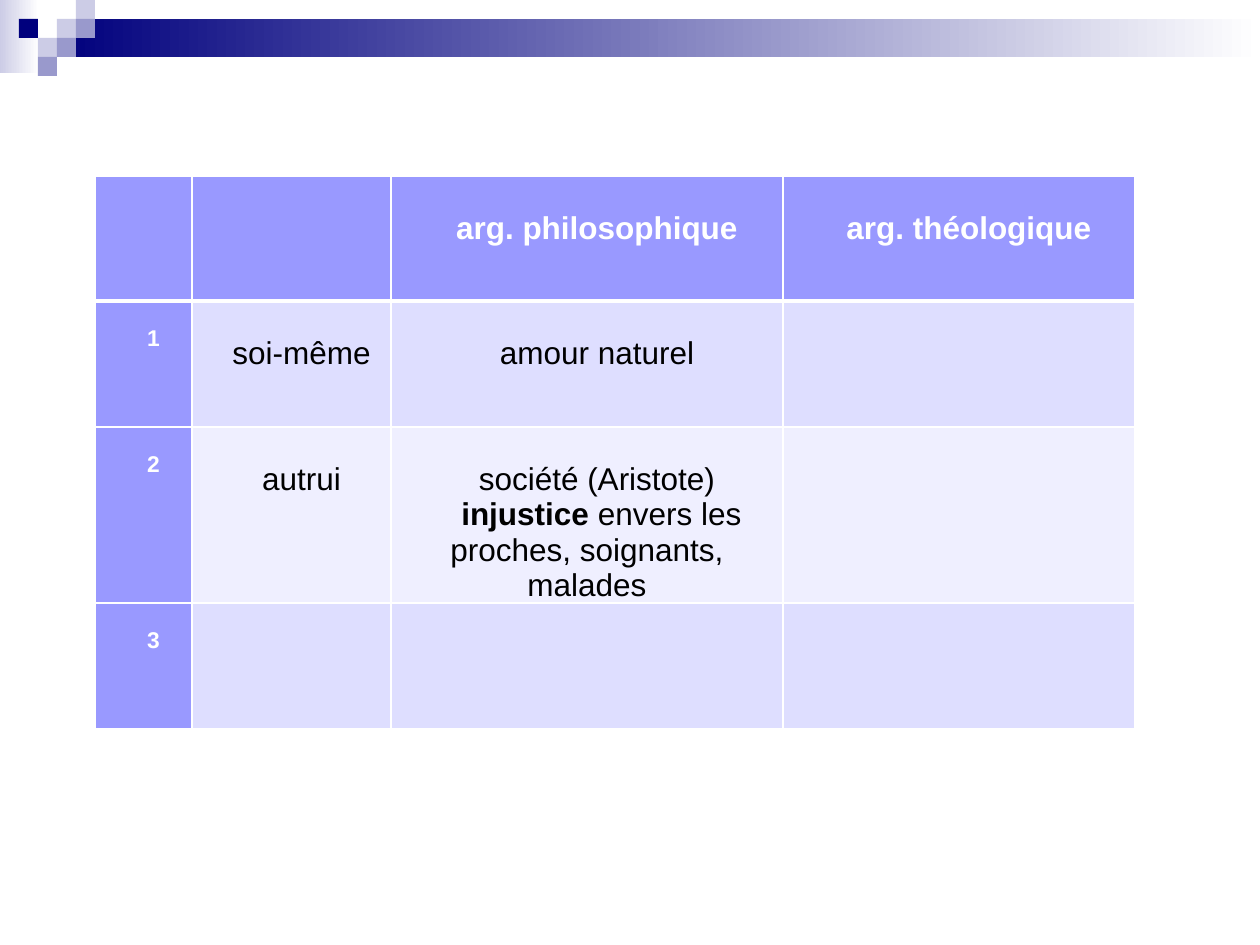
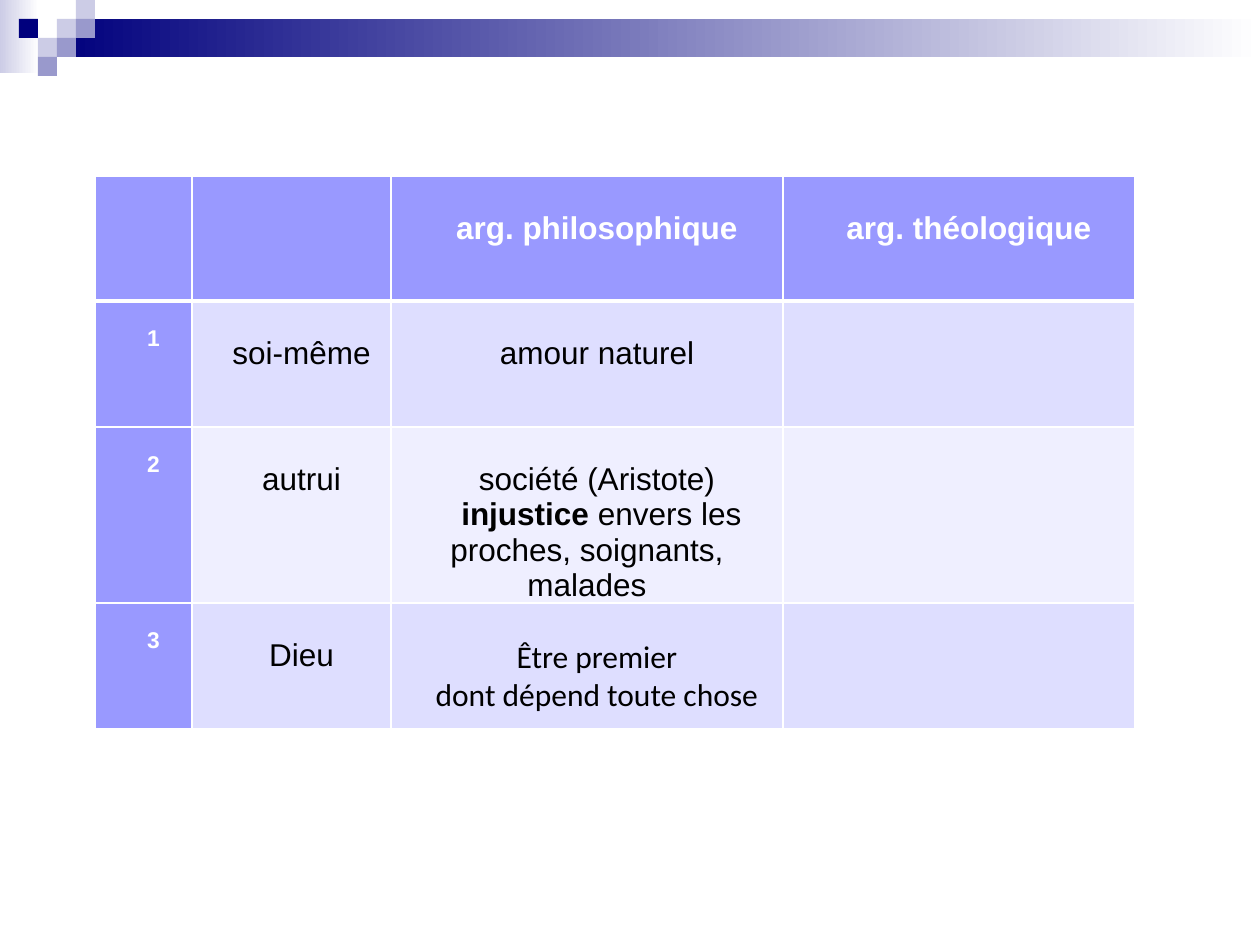
from dataclasses import dataclass
from itertools import count

from lxml.etree import SubElement
from pptx import Presentation
from pptx.dml.color import RGBColor
from pptx.enum.shapes import MSO_SHAPE
from pptx.enum.text import PP_ALIGN
from pptx.oxml.ns import qn
from pptx.util import Emu, Pt

PX = 914400 / 126
SLIDE_SIZE = (1260, 945)
TILE = 19
COLORS = {
    "navy": "00007D",
    "mist": "CCCCE6",
    "lavender": "9999CC",
    "header": "9999FF",
    "odd_row": "DEDEFF",
    "even_row": "EFEFFF",
    "white": "FFFFFF",
    "black": "000000",
}

TABLE_BOX = (95, 176, 1040, 553)
COLUMN_WIDTHS = (97, 199, 392, 352)
ROW_HEIGHTS = (125, 126, 176, 126)
SIDE_MARGIN = 9
FIRST_LINE_INDENT = 20


@dataclass(frozen=True)
class Run:
    """A stretch of text in one font."""
    text: str
    bold: bool = False
    font: str = "Arial"


def line(text, bold=False, font="Arial"):
    """Return a paragraph made of a single run."""
    return [Run(text, bold, font)]


HEADINGS = [[], [], [line("arg. philosophique", True)], [line("arg. théologique", True)]]
ONESELF = [[line("1", True)], [line("soi-même")], [line("amour naturel")], []]
OTHERS = [
    [line("2", True)],
    [line("autrui")],
    [
        line("société (Aristote)"),
        [Run(" "), Run("injustice", True), Run(" envers les proches, soignants, malades")],
    ],
    [],
]
GOD_OPEN = [[line("3", True)], [], [], []]
GOD_ANSWERED = [
    [line("3", True)],
    [line("Dieu")],
    [line("Être premier", font="Calibri"), line("dont dépend toute chose", font="Calibri")],
    [],
]


def px(length):
    """Turn a length in px into EMU."""
    return Emu(round(length * PX))


def rgb(name):
    """Look up a palette colour."""
    return RGBColor.from_string(COLORS[name])


def add_block(group, box, start, end=None):
    """Add a rectangle, plain or fading from left to right."""
    block = group.shapes.add_shape(MSO_SHAPE.RECTANGLE, *map(px, box))
    block.shadow.inherit = False
    block.line.fill.background()
    if end is None:
        block.fill.solid()
        block.fill.fore_color.rgb = rgb(start)
        return
    block.fill.gradient()
    block.fill.gradient_angle = 0
    for stop, name, position in zip(block.fill.gradient_stops, (start, end), (0, 1)):
        stop.color.rgb = rgb(name)
        stop.position = position


def decorate_master(master, slide):
    """Draw the top band and its tiles, and move them to the master."""
    band = slide.shapes.add_group_shape()
    add_block(band, (0, 0, 39, 73), "mist", "white")
    add_block(band, (3 * TILE, TILE, SLIDE_SIZE[0] - 3 * TILE, 2 * TILE), "navy", "white")
    tiles = [
        (3, 1, "mist"), (4, 0, "mist"), (4, 1, "lavender"), (2, 2, "mist"),
        (1, 1, "navy"), (3, 2, "lavender"), (2, 3, "lavender"),
    ]
    for column, row, color in tiles:
        add_block(band, (column * TILE, row * TILE, TILE, TILE), color)
    fresh_ids = count(100)
    for properties in band.element.iter(qn("p:cNvPr")):
        properties.set("id", str(next(fresh_ids)))
    master.shapes.element.insert(2, band.element)


def set_borders(cell, widths):
    """Give a cell white borders: left, right, top, bottom, in points."""
    properties = cell._tc.get_or_add_tcPr()
    for side, width in zip("LRTB", widths):
        border = SubElement(properties, qn(f"a:ln{side}"), w=str(Pt(width)))
        solid = SubElement(border, qn("a:solidFill"))
        SubElement(solid, qn("a:srgbClr"), val=COLORS["white"])


def write_cell(cell, paragraphs, size, color):
    """Write centred paragraphs one line below the top of a cell."""
    cell.margin_left = cell.margin_right = px(SIDE_MARGIN)
    cell.margin_top = px(35 if size == 18 else 25)
    cell.margin_bottom = 0
    frame = cell.text_frame
    for index, runs in enumerate(paragraphs):
        paragraph = frame.add_paragraph() if index else frame.paragraphs[0]
        paragraph.alignment = PP_ALIGN.CENTER
        paragraph._p.get_or_add_pPr().set("indent", str(px(FIRST_LINE_INDENT)))
        for part in runs:
            run = paragraph.add_run()
            run.text = part.text
            run.font.name = part.font
            run.font.size = Pt(size)
            run.font.bold = part.bold
            run.font.color.rgb = rgb(color)


def add_argument_table(slide, box, rows):
    """Add the table of arguments, with heading row and number column."""
    table = slide.shapes.add_table(len(rows), len(COLUMN_WIDTHS), *map(px, box)).table
    table.first_row = table.horz_banding = False
    for column, width in zip(table.columns, COLUMN_WIDTHS):
        column.width = px(width)
    for row, height in zip(table.rows, ROW_HEIGHTS):
        row.height = px(height)
    for r, contents in enumerate(rows):
        for c, paragraphs in enumerate(contents):
            cell = table.cell(r, c)
            is_heading = r == 0 or c == 0
            set_borders(cell, (1, 1, 3 if r == 1 else 1, 3 if r == 0 else 1))
            cell.fill.solid()
            body_fill = "odd_row" if r % 2 else "even_row"
            cell.fill.fore_color.rgb = rgb("header" if is_heading else body_fill)
            size = 13 if r and c == 0 else 18
            write_cell(cell, paragraphs, size, "white" if is_heading else "black")


def main():
    """Build both steps of the table."""
    deck = Presentation()
    deck.slide_width, deck.slide_height = map(px, SLIDE_SIZE)
    blank = deck.slide_layouts[6]
    for step, last_row in enumerate((GOD_OPEN, GOD_ANSWERED)):
        slide = deck.slides.add_slide(blank)
        if step == 0:
            decorate_master(deck.slide_master, slide)
        add_argument_table(slide, TABLE_BOX, [HEADINGS, ONESELF, OTHERS, last_row])
    deck.save("out.pptx")


if __name__ == "__main__":
    main()
